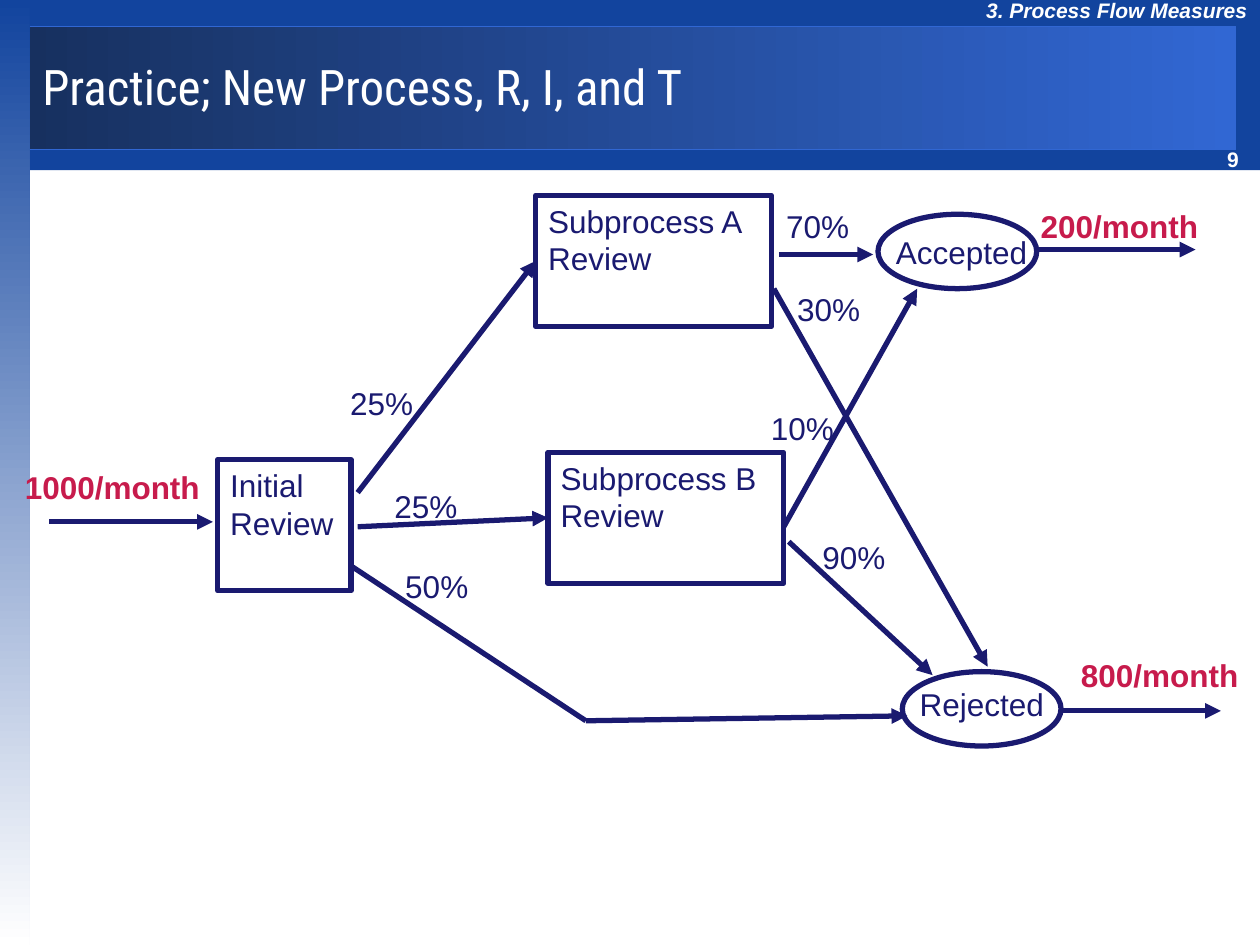
from lxml.etree import SubElement
from pptx import Presentation
from pptx.dml.color import RGBColor
from pptx.enum.shapes import MSO_CONNECTOR as Link, MSO_SHAPE as Preset
from pptx.enum.text import MSO_ANCHOR as Anchor, PP_ALIGN as Align
from pptx.oxml.ns import qn
from pptx.util import Cm, Pt

COLORS = {
    "blue": "12449E",
    "dark": "17305F",
    "bright": "3167D3",
    "white": "FFFFFF",
    "ink": "1A1A70",
    "rate": "C71B4C",
}
LEFT_SIDE = 1


def rgb(name):
    return RGBColor.from_string(COLORS[name])


class FlowSlide:
    body_font = "Arial"
    title_font = "Roboto Condensed"
    body_size = 18
    stroke = 3

    def __init__(self, prs):
        self.slide = prs.slides.add_slide(prs.slide_layouts[5])
        self.shapes = self.slide.shapes

    def style_text(self, frame, text, color="ink", size=body_size, font=body_font,
                   bold=False, italic=False):
        frame.text = text
        for paragraph in frame.paragraphs:
            paragraph.alignment = Align.LEFT
            for run in paragraph.runs:
                run.font.name = font
                run.font.size = Pt(size)
                run.font.bold = bold
                run.font.italic = italic
                run.font.color.rgb = rgb(color)

    def title(self, text, x, y, w, h):
        heading = self.shapes.title
        heading.left, heading.top, heading.width, heading.height = map(Cm, (x, y, w, h))
        heading.text_frame.vertical_anchor = Anchor.MIDDLE
        self.style_text(heading.text_frame, text, "white", 28, self.title_font)
        heading.element.getparent().append(heading.element)

    def panel(self, x, y, w, h, fill, fade_to=None, angle=0, border=None):
        panel = self.shapes.add_shape(Preset.RECTANGLE, *map(Cm, (x, y, w, h)))
        panel.shadow.inherit = False
        if fade_to:
            panel.fill.gradient()
            panel.fill.gradient_angle = angle
            for stop, color in zip(panel.fill.gradient_stops, (fill, fade_to)):
                stop.color.rgb = rgb(color)
        else:
            panel.fill.solid()
            panel.fill.fore_color.rgb = rgb(fill)
        if border:
            panel.line.color.rgb = rgb(border)
            panel.line.width = Pt(0.75)
        else:
            panel.line.fill.background()

    def outline(self, preset, x, y, w, h, text=""):
        outline = self.shapes.add_shape(preset, *map(Cm, (x, y, w, h)))
        outline.shadow.inherit = False
        outline.fill.background()
        outline.line.color.rgb = rgb("ink")
        outline.line.width = Pt(self.stroke)
        if text:
            outline.text_frame.vertical_anchor = Anchor.TOP
            self.style_text(outline.text_frame, text)
        return outline

    def label(self, text, x, y, w, h=1.02, **style):
        frame = self.shapes.add_textbox(*map(Cm, (x, y, w, h))).text_frame
        frame.word_wrap = False
        self.style_text(frame, text, **style)

    def arrow(self, x1, y1, x2, y2, target=None, head=True):
        arrow = self.shapes.add_connector(Link.STRAIGHT, *map(Cm, (x1, y1, x2, y2)))
        if target is not None:
            arrow.end_connect(target, LEFT_SIDE)
        arrow.line.color.rgb = rgb("ink")
        arrow.line.width = Pt(self.stroke)
        properties = arrow.element.spPr
        if head:
            SubElement(properties.find(qn("a:ln")), qn("a:tailEnd"), type="triangle")
        SubElement(properties, qn("a:effectLst"))


def main():
    prs = Presentation()
    prs.slide_width, prs.slide_height = Cm(25.4), Cm(19.05)
    flow = FlowSlide(prs)

    flow.panel(0.5, 0, 24.9, 3.43, "blue")
    flow.panel(0.5, 0.53, 24.41, 2.49, "dark", "bright", border="bright")
    flow.panel(0, 0, 0.6, 19.05, "blue", "white", angle=270)
    flow.label("9", 24.49, 2.82, 0.74, 0.76, color="white", size=12, bold=True)
    flow.label("3. Process Flow Measures", 19.63, -0.18, 5.77, 0.76,
               color="white", size=12, bold=True, italic=True)
    flow.title("Practice; New Process, R, I, and T", 0.6, 0.53, 24.8, 2.4)

    flow.outline(Preset.RECTANGLE, 4.39, 9.27, 2.69, 2.64, "Initial\nReview")
    review_a = flow.outline(Preset.RECTANGLE, 10.8, 3.94, 4.75, 2.64, "Subprocess A\nReview")
    review_b = flow.outline(Preset.RECTANGLE, 11.05, 9.12, 4.75, 2.64, "Subprocess B\nReview")

    for outcome, x, y, text_x, text_y, text_w in (
        ("Accepted", 17.7, 4.32, 17.81, 4.57, 3.15),
        ("Rejected", 18.19, 13.54, 18.29, 13.69, 3.02),
    ):
        flow.outline(Preset.OVAL, x, y, 3.2, 1.5)
        flow.label(outcome, text_x, text_y, text_w)

    flow.arrow(7.21, 9.93, 10.8, 5.26, target=review_a)
    flow.arrow(7.21, 10.62, 11.05, 10.44, target=review_b)
    flow.arrow(7.11, 11.43, 11.81, 14.53, head=False)
    for ends in (
        (0.99, 10.52, 4.29, 10.52),
        (11.81, 14.53, 18.29, 14.43),
        (15.7, 5.13, 17.6, 5.13),
        (15.6, 5.82, 19.91, 13.44),
        (15.8, 10.62, 18.49, 5.82),
        (15.9, 10.92, 18.8, 13.61),
        (20.9, 5.03, 24.1, 5.03),
        (21.41, 14.33, 24.61, 14.33),
    ):
        flow.arrow(*ends)

    for share, x, y in (
        ("25%", 6.81, 7.62),
        ("50%", 7.92, 11.3),
        ("25%", 7.7, 9.7),
        ("70%", 15.6, 4.04),
        ("30%", 15.82, 5.72),
        ("90%", 16.33, 10.72),
        ("10%", 15.29, 8.13),
    ):
        flow.label(share, x, y, 1.78)

    for rate, x, y, w in (
        ("1000/month", 0.25, 9.32, 4.04),
        ("800/month", 21.54, 13.11, 3.68),
        ("200/month", 20.73, 4.04, 3.68),
    ):
        flow.label(rate, x, y, w, color="rate", bold=True)

    prs.save("out.pptx")


if __name__ == "__main__":
    main()
